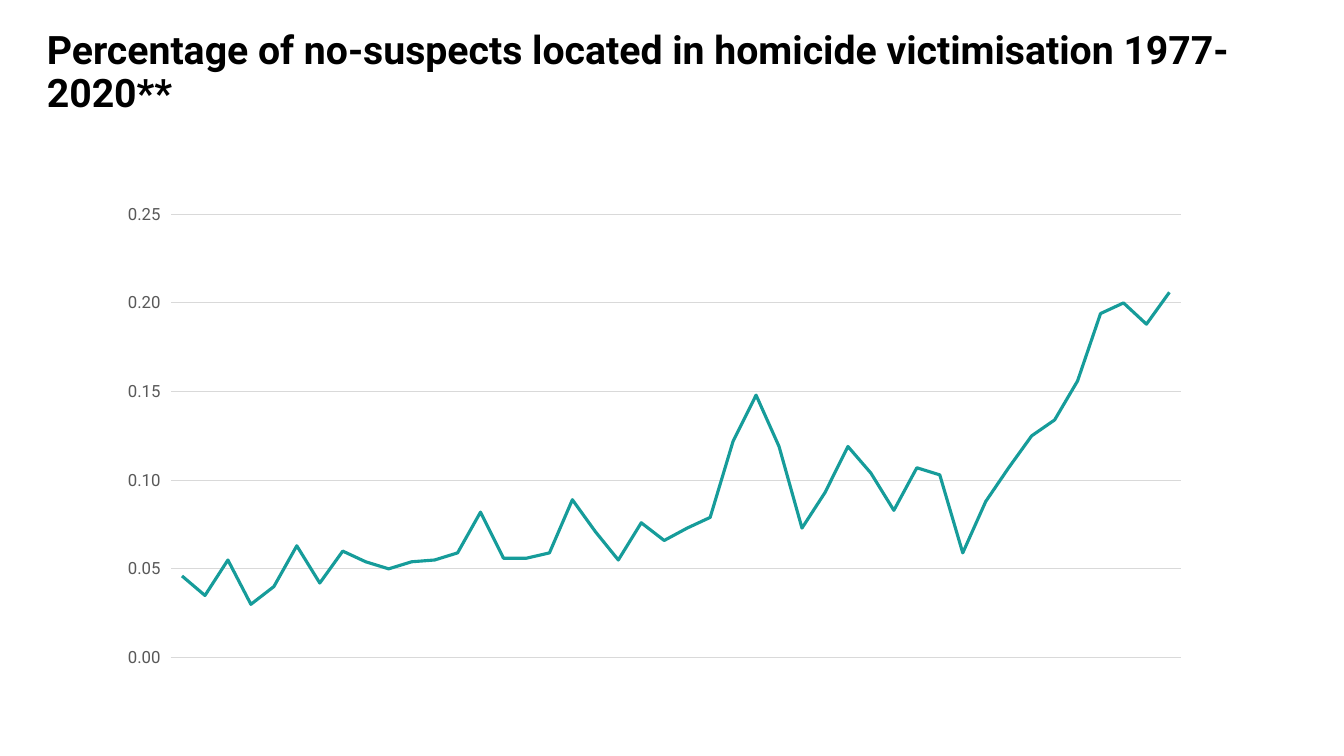
from dataclasses import dataclass

from lxml import etree
from pptx import Presentation
from pptx.chart.data import CategoryChartData
from pptx.dml.color import RGBColor
from pptx.enum.chart import XL_CHART_TYPE, XL_MARKER_STYLE, XL_TICK_LABEL_POSITION, XL_TICK_MARK
from pptx.enum.text import MSO_ANCHOR
from pptx.oxml.ns import qn
from pptx.util import Emu, Pt

LINE_CHART = XL_CHART_TYPE.LINE
NO_MARKER = XL_MARKER_STYLE.NONE
NO_TICK = XL_TICK_MARK.NONE
NO_LABELS = XL_TICK_LABEL_POSITION.NONE
LOW_LABELS = XL_TICK_LABEL_POSITION.LOW
TOP = MSO_ANCHOR.TOP

EMU_PER_PX = 914400 / 100.8
SLIDE_SIZE = (1344, 756)


@dataclass(frozen=True)
class Theme:
    font: str = "Roboto"
    title: RGBColor = RGBColor(0x00, 0x00, 0x00)
    label: RGBColor = RGBColor(0x59, 0x59, 0x59)
    grid: RGBColor = RGBColor(0xD9, 0xD9, 0xD9)
    series: RGBColor = RGBColor(0x16, 0x9C, 0x9A)
    title_pt: float = 28
    label_pt: float = 12
    grid_pt: float = 0.75
    series_pt: float = 2.25


@dataclass(frozen=True)
class Box:
    left: int
    top: int
    width: int
    height: int

    def emu(self) -> tuple[Emu, ...]:
        return tuple(px(n) for n in (self.left, self.top, self.width, self.height))


@dataclass(frozen=True)
class AxisStyle:
    labels: XL_TICK_LABEL_POSITION
    has_line: bool
    has_grid: bool


THEME = Theme()
TITLE = "Percentage of no-suspects located in homicide victimisation 1977-2020**"
TITLE_BOX = Box(37, 26, 1212, 129)
CHART_BOX = Box(120, 155, 1075, 544)
PLOT = {"x": 0.047, "y": 0.109, "w": 0.94, "h": 0.815}  # shares of the chart box
YEAR_AXIS = AxisStyle(NO_LABELS, has_line=True, has_grid=False)
SHARE_AXIS = AxisStyle(LOW_LABELS, has_line=False, has_grid=True)
FIRST_YEAR = 1977
SHARES = (
    0.046, 0.035, 0.055, 0.03, 0.04, 0.063, 0.042, 0.06, 0.054, 0.05, 0.054,
    0.055, 0.059, 0.082, 0.056, 0.056, 0.059, 0.089, 0.071, 0.055, 0.076, 0.066,
    0.073, 0.079, 0.122, 0.148, 0.119, 0.073, 0.093, 0.119, 0.104, 0.083, 0.107,
    0.103, 0.059, 0.088, 0.107, 0.125, 0.134, 0.156, 0.194, 0.2, 0.188, 0.206,
)


def px(n: int) -> Emu:
    return Emu(round(n * EMU_PER_PX))


def set_font(font, size: float, color: RGBColor, bold: bool = False) -> None:
    for name, value in {"name": THEME.font, "size": Pt(size), "bold": bold}.items():
        setattr(font, name, value)
    font.color.rgb = color


def set_line(line, color: RGBColor, width: float) -> None:
    line.color.rgb = color
    line.width = Pt(width)


def style_axis(axis, style: AxisStyle) -> None:
    formats = {
        "major_tick_mark": NO_TICK,
        "minor_tick_mark": NO_TICK,
        "tick_label_position": style.labels,
        "has_major_gridlines": style.has_grid,
    }
    for name, value in formats.items():
        setattr(axis, name, value)
    set_font(axis.tick_labels.font, THEME.label_pt, THEME.label)
    if style.has_line:
        set_line(axis.format.line, THEME.grid, THEME.grid_pt)
    else:
        axis.format.line.fill.background()
    if style.has_grid:
        set_line(axis.major_gridlines.format.line, THEME.grid, THEME.grid_pt)


def place_plot(chart, shares: dict[str, float]) -> None:
    plot_area = chart.plots[0]._element.getparent()
    for old in plot_area.findall(qn("c:layout")):
        plot_area.remove(old)
    layout = etree.Element(qn("c:layout"))
    manual = etree.SubElement(layout, qn("c:manualLayout"))
    values = {"layoutTarget": "inner", "xMode": "edge", "yMode": "edge", **shares}
    for tag, value in values.items():
        etree.SubElement(manual, qn(f"c:{tag}")).set("val", str(value))
    plot_area.insert(0, layout)


def add_title(slide, text: str, box: Box) -> None:
    tf = slide.shapes.add_textbox(*box.emu()).text_frame
    tf.word_wrap = True
    tf.vertical_anchor = TOP
    p = tf.paragraphs[0]
    p.line_spacing = 0.9
    r = p.add_run()
    r.text = text
    set_font(r.font, THEME.title_pt, THEME.title, bold=True)


def add_share_chart(slide, box: Box) -> None:
    data = CategoryChartData(number_format="0.00")
    data.categories = [str(FIRST_YEAR + i) for i in range(len(SHARES))]
    data.add_series("Series 1", SHARES)
    chart = slide.shapes.add_chart(LINE_CHART, *box.emu(), data).chart
    chart.has_title = False
    chart.has_legend = False
    set_font(chart.font, THEME.label_pt, THEME.label)

    # Axes
    style_axis(chart.category_axis, YEAR_AXIS)
    axis = chart.value_axis
    style_axis(axis, SHARE_AXIS)
    axis.minimum_scale, axis.maximum_scale, axis.major_unit = 0, 0.25, 0.05
    axis.tick_labels.number_format = "0.00"
    axis.tick_labels.number_format_is_linked = False

    # Line
    chart.plots[0].vary_by_categories = False
    series = chart.plots[0].series[0]
    series.smooth = False
    series.marker.style = NO_MARKER
    set_line(series.format.line, THEME.series, THEME.series_pt)
    place_plot(chart, PLOT)


def main() -> None:
    prs = Presentation()
    prs.slide_width, prs.slide_height = (px(n) for n in SLIDE_SIZE)
    s = prs.slides.add_slide(prs.slide_layouts[6])
    add_title(s, TITLE, TITLE_BOX)
    add_share_chart(s, CHART_BOX)
    prs.save("out.pptx")


if __name__ == "__main__":
    main()
